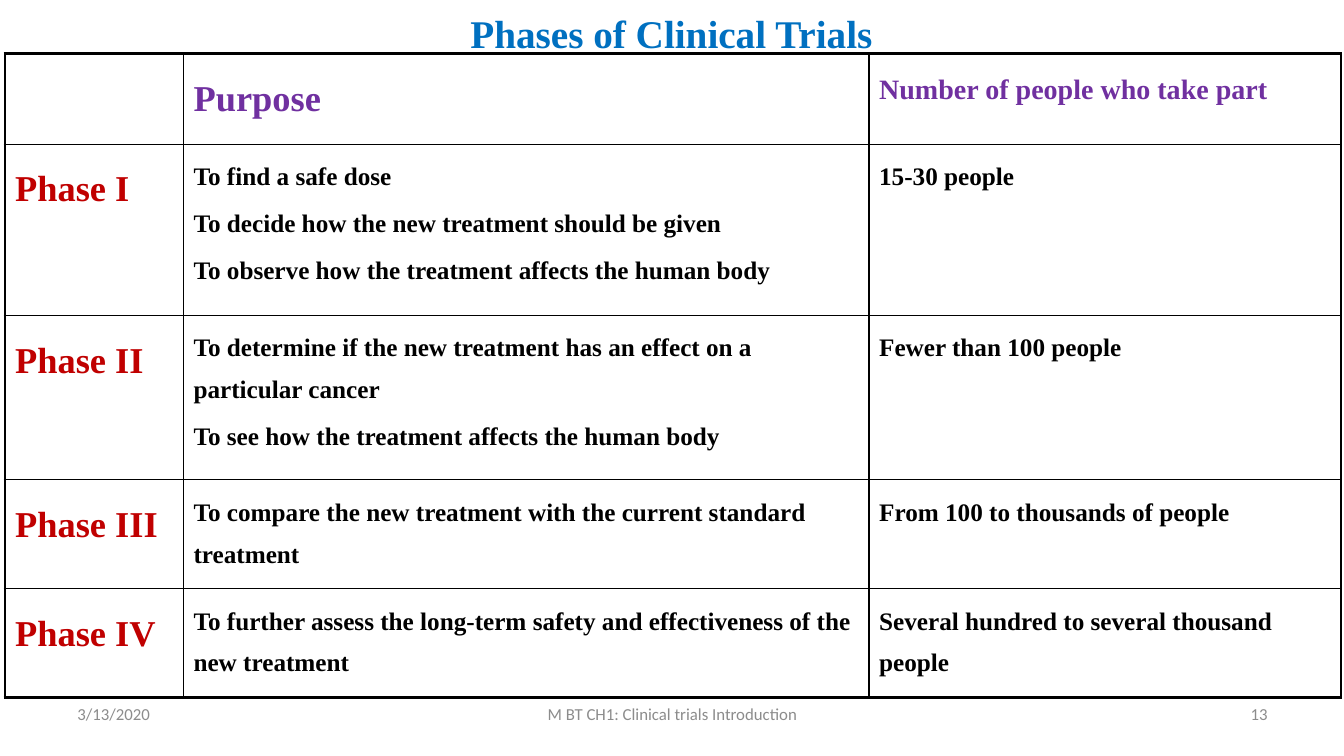
from lxml import etree
from pptx import Presentation
from pptx import util as u
from pptx.dml.color import RGBColor
from pptx.enum import text
from pptx.oxml import ns

SERIF = "Times New Roman"
SANS = "Calibri"
BLUE, PURPLE, RED, BLACK, GRAY = "0070C0", "7030A0", "C00000", "000000", "8C8C8C"
LEFT, CENTER, RIGHT = text.PP_ALIGN.LEFT, text.PP_ALIGN.CENTER, text.PP_ALIGN.RIGHT

COLUMNS = [1.77, 6.8, 4.68]
ROWS = [0.9, 1.7, 1.63, 1.08, 1.08]
PHASES = [
    ("Phase I",
     ["To find a safe dose",
      "To decide how the new treatment should be given",
      "To observe how the treatment affects the human body"],
     "15-30 people"),
    ("Phase II",
     ["To determine if the new treatment has an effect on a particular cancer",
      "To see how the treatment affects the human body"],
     "Fewer than 100 people"),
    ("Phase III",
     ["To compare the new treatment with the current standard treatment"],
     "From 100 to thousands of people"),
    ("Phase IV",
     ["To further assess the long-term safety and effectiveness of the new treatment"],
     "Several hundred to several thousand people"),
]
FOOTERS = [
    ("3/13/2020", 0.67, 3.11, LEFT),
    ("M BT CH1: Clinical trials Introduction", 4.56, 4.22, CENTER),
    ("13", 9.56, 3.11, RIGHT),
]


def color(value):
    return RGBColor.from_string(value)


class SlideBuilder:
    def __init__(self, deck):
        self.slide = deck.slides.add_slide(deck.slide_layouts[5])

    def add_lines(self, frame, lines, size, tint, font=SERIF, bold=True,
                  align=LEFT, spacing=1.0):
        for index, line in enumerate(lines):
            para = frame.add_paragraph() if index else frame.paragraphs[0]
            para.alignment = align
            para.line_spacing = spacing
            para.space_before = u.Pt(0.2 * size if index else 0)
            span = para.add_run()
            span.text = line
            span.font.name = font
            span.font.size = u.Pt(size)
            span.font.bold = bold
            span.font.color.rgb = color(tint)

    def title(self, words, left, top, width, height):
        box = self.slide.shapes.title
        box.left, box.top = u.Inches(left), u.Inches(top)
        box.width, box.height = u.Inches(width), u.Inches(height)
        frame = box.text_frame
        frame.auto_size = text.MSO_AUTO_SIZE.NONE
        frame.vertical_anchor = text.MSO_ANCHOR.MIDDLE
        self.add_lines(frame, [words], 28, BLUE, align=CENTER, spacing=0.9)

    def footer(self, words, left, width, align):
        box = self.slide.shapes.add_textbox(
            u.Inches(left), u.Inches(6.83), u.Inches(width), u.Inches(0.5))
        frame = box.text_frame
        frame.word_wrap = True
        frame.vertical_anchor = text.MSO_ANCHOR.MIDDLE
        self.add_lines(frame, [words], 12, GRAY, SANS, False, align)

    def border(self, cell, outer_sides):
        properties = cell._tc.get_or_add_tcPr()
        for index, side in enumerate("LRTB"):
            width = 2.25 if side in outer_sides else 1
            line = etree.Element(ns.qn(f"a:ln{side}"), w=str(int(u.Pt(width))))
            fill = etree.SubElement(line, ns.qn("a:solidFill"))
            etree.SubElement(fill, ns.qn("a:srgbClr"), val=BLACK)
            properties.insert(index, line)

    def table(self, left, top, columns, rows):
        table = self.slide.shapes.add_table(
            len(rows), len(columns), u.Inches(left), u.Inches(top),
            u.Inches(sum(columns)), u.Inches(sum(rows))).table
        table.first_row = table.horz_banding = False
        for column, width in zip(table.columns, columns):
            column.width = u.Inches(width)
        for row, height in zip(table.rows, rows):
            row.height = u.Inches(height)
        last_row, last_column = len(rows) - 1, len(columns) - 1
        for r in range(len(rows)):
            for c in range(len(columns)):
                cell = table.cell(r, c)
                cell.fill.background()
                edges = {"L": c == 0, "R": c == last_column,
                         "T": r == 0, "B": r == last_row}
                self.border(cell, [side for side in edges if edges[side]])
        return table

    def fill_cell(self, cell, lines, size, tint):
        self.add_lines(cell.text_frame, lines, size, tint, spacing=1.5)


def main():
    deck = Presentation()
    deck.slide_width, deck.slide_height = u.Inches(13.33), u.Inches(7.5)
    builder = SlideBuilder(deck)
    builder.title("Phases of Clinical Trials", 0.66, 0, 12, 0.71)

    table = builder.table(0.05, 0.53, COLUMNS, ROWS)
    builder.fill_cell(table.cell(0, 1), ["Purpose"], 26, PURPLE)
    builder.fill_cell(table.cell(0, 2), ["Number of people who take part"], 20, PURPLE)
    for row, (phase, purposes, people) in enumerate(PHASES, 1):
        builder.fill_cell(table.cell(row, 0), [phase], 26, RED)
        builder.fill_cell(table.cell(row, 1), purposes, 18, BLACK)
        builder.fill_cell(table.cell(row, 2), [people], 18, BLACK)

    for footer in FOOTERS:
        builder.footer(*footer)
    deck.save("out.pptx")


if __name__ == "__main__":
    main()
